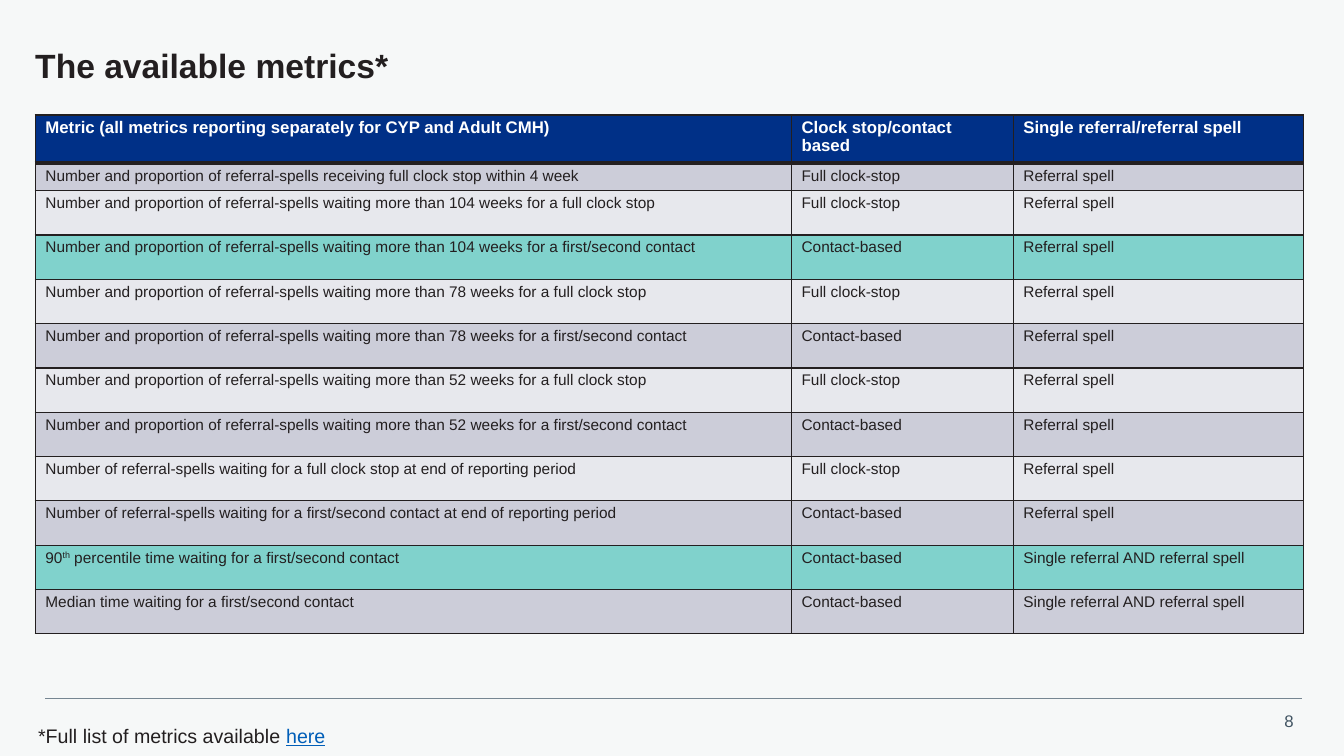
import dataclasses

import lxml.etree
import pptx
import pptx.dml.color
import pptx.enum.shapes
import pptx.enum.text
import pptx.oxml
import pptx.oxml.ns
import pptx.util

Inches = pptx.util.Inches
Pt = pptx.util.Pt
qn = pptx.oxml.ns.qn


@dataclasses.dataclass(frozen=True)
class Theme:
    font: str = "Arial"
    page: str = "F6F8F8"
    ink: str = "231F20"
    navy: str = "003087"
    white: str = "FFFFFF"
    slate: str = "425563"
    rule: str = "768692"
    link: str = "005EB8"
    dark_band: str = "CCCDD9"
    light_band: str = "E7E8ED"
    highlight: str = "80D2CC"
    title: int = 24
    note: int = 14
    header: int = 12
    body: int = 11
    number: int = 12


def rgb(value):
    return pptx.dml.color.RGBColor.from_string(value)


class SlideBuilder:
    def __init__(self, prs, theme):
        self.theme = theme
        self.s = prs.slides.add_slide(prs.slide_layouts[6])

    def run(self, p, text, size, color, baseline=None, **formats):
        r = p.add_run()
        r.text = text
        formats = {"name": self.theme.font, "size": Pt(size), **formats}
        for name, value in formats.items():
            setattr(r.font, name, value)
        r.font.color.rgb = rgb(color)
        if baseline:
            r.font._element.set("baseline", str(baseline))

    def background(self, width, height):
        sp = self.s.shapes.add_shape(
            pptx.enum.shapes.MSO_SHAPE.RECTANGLE, 0, 0, width, height)
        sp.shadow.inherit = False
        sp.fill.solid()
        sp.fill.fore_color.rgb = rgb(self.theme.page)
        sp.line.fill.background()

    def text(self, box, runs, frame=None, paragraph=None):
        sp = self.s.shapes.add_textbox(*map(Inches, box))
        tf = sp.text_frame
        for name, value in {"word_wrap": True, **(frame or {})}.items():
            setattr(tf, name, value)
        p = tf.paragraphs[0]
        for name, value in (paragraph or {}).items():
            setattr(p, name, value)
        for text, size, color, formats in runs:
            self.run(p, text, size, color, **formats)

    def line(self, x1, y1, x2, y2):
        cn = self.s.shapes.add_connector(
            pptx.enum.shapes.MSO_CONNECTOR.STRAIGHT,
            *map(Inches, (x1, y1, x2, y2)))
        cn.line.color.rgb = rgb(self.theme.rule)
        cn.line.width = Pt(0.5)
        lxml.etree.SubElement(cn._element.spPr, qn("a:effectLst"))

    def borders(self, cell, widths):
        tcPr = cell._tc.get_or_add_tcPr()
        for i, (side, width) in enumerate(widths.items()):
            ln = lxml.etree.Element(qn(f"a:ln{side}"), w=str(Pt(width)))
            fill = lxml.etree.SubElement(ln, qn("a:solidFill"))
            lxml.etree.SubElement(fill, qn("a:srgbClr"), val=self.theme.ink)
            tcPr.insert(i, ln)

    def table(self, left, top, widths, heights, rows, fills):
        tbl = self.s.shapes.add_table(
            len(rows), len(widths), Inches(left), Inches(top),
            Inches(sum(widths)), Inches(sum(heights))).table
        tbl.horz_banding = False
        for col, width in zip(tbl.columns, widths):
            col.width = Inches(width)
        for i, (row, height, fill) in enumerate(zip(rows, heights, fills)):
            tbl.rows[i].height = Inches(height)
            head = i == 0
            size = self.theme.header if head else self.theme.body
            color = self.theme.white if head else self.theme.ink
            edges = {"L": 1, "R": 1, "T": 3 if i == 1 else 1,
                     "B": 3 if head else 1}
            for j, value in enumerate(row):
                cell = tbl.cell(i, j)
                cell.fill.solid()
                cell.fill.fore_color.rgb = rgb(fill)
                self.borders(cell, edges)
                p = cell.text_frame.paragraphs[0]
                p.line_spacing = 0.93
                parts = [(value, None)] if isinstance(value, str) else value
                for text, baseline in parts:
                    self.run(p, text, size, color, baseline, bold=head)


def metric_rows():
    full, contact = "Full clock-stop", "Contact-based"
    spell, both = "Referral spell", "Single referral AND referral spell"
    waiting = "Number and proportion of referral-spells waiting more than"
    rows = [
        ("Metric (all metrics reporting separately for CYP and Adult CMH)",
         "Clock stop/contact based", "Single referral/referral spell"),
        ("Number and proportion of referral-spells receiving full clock stop "
         "within 4 week", full, spell),
    ]
    kinds = (("full clock stop", full), ("first/second contact", contact))
    for weeks in (104, 78, 52):
        for event, basis in kinds:
            rows.append((f"{waiting} {weeks} weeks for a {event}", basis, spell))
    for event, basis in kinds:
        rows.append((f"Number of referral-spells waiting for a {event} "
                     "at end of reporting period", basis, spell))
    percentile = (("90", None), ("th", 30000),
                  (" percentile time waiting for a first/second contact", None))
    rows.append((percentile, contact, both))
    rows.append(("Median time waiting for a first/second contact", contact, both))
    return rows


def main():
    prs = pptx.Presentation()
    prs.slide_width, prs.slide_height = Inches(13.33), Inches(7.5)
    theme = Theme()
    slide = SlideBuilder(prs, theme)
    slide.background(prs.slide_width, prs.slide_height)
    slide.text((12.52, 7, 0.41, 0.3), [("8", theme.number, theme.slate, {})],
               {"word_wrap": False},
               {"alignment": pptx.enum.text.PP_ALIGN.RIGHT})
    slide.line(0.45, 6.93, 12.91, 6.93)
    margins = ("margin_left", "margin_top", "margin_right", "margin_bottom")
    slide.text((0.35, 0.2, 12.47, 0.95),
               [("The available metrics*", theme.title, theme.ink,
                 {"bold": True})],
               {"vertical_anchor": pptx.enum.text.MSO_ANCHOR.MIDDLE,
                **dict.fromkeys(margins, 0)},
               {"line_spacing": 0.9})

    rows = metric_rows()
    bands = (theme.light_band, theme.dark_band)
    fills = [theme.navy] + [bands[i % 2] for i in range(1, len(rows))]
    for i in (3, 10):
        fills[i] = theme.highlight
    heights = [0.48, 0.26] + [0.44] * (len(rows) - 2)
    slide.table(0.35, 1.14, (7.5, 2.2, 2.88), heights, rows, fills)

    slide.text((0.28, 7.13, 7.17, 0.34),
               [("*Full list of metrics available ", theme.note, theme.ink, {}),
                ("here", theme.note, theme.link, {"underline": True})])
    prs.save("out.pptx")


if __name__ == "__main__":
    main()
